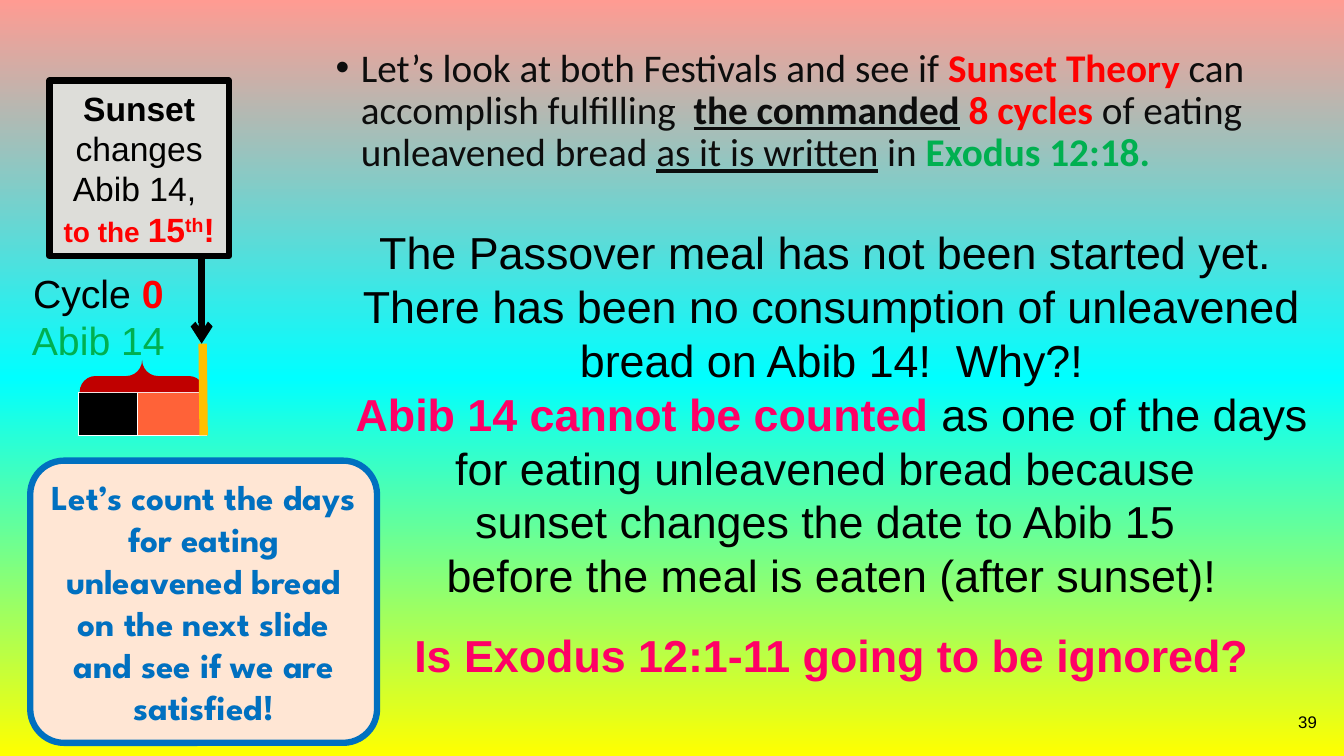
"""Build the slide on Abib 14 and the Sunset Theory."""
from copy import deepcopy

from lxml import etree
from pptx import Presentation
from pptx.dml.color import RGBColor
from pptx.enum.shapes import MSO_CONNECTOR, MSO_SHAPE
from pptx.enum.text import MSO_ANCHOR, MSO_AUTO_SIZE, PP_ALIGN
from pptx.oxml.ns import qn
from pptx.util import Inches, Pt

CENTER, RIGHT, LEFT = PP_ALIGN.CENTER, PP_ALIGN.RIGHT, PP_ALIGN.LEFT
TOP, MIDDLE = MSO_ANCHOR.TOP, MSO_ANCHOR.MIDDLE
RECTANGLE, ROUNDED, BRACE = MSO_SHAPE.RECTANGLE, MSO_SHAPE.ROUNDED_RECTANGLE, MSO_SHAPE.RIGHT_BRACE
STRAIGHT = MSO_CONNECTOR.STRAIGHT
NO_FIT = MSO_AUTO_SIZE.NONE

BLACK, INK, RED, GREEN, PINK, BLUE = "000000", "0D0D0D", "FF0000", "00B050", "FF0066", "0070C0"
SKY = [(0, "FF9B92"), (0.5, "00FFFF"), (1, "FFFF00")]
DAY_PARTS = [(0.58, "000000"), (0.69, "FF6238")]

STRONG_RED = {"color": RED, "bold": True}
STRONG_PINK = {"color": PINK, "bold": True}
INTRO = [[
    ("Let’s look at both Festivals and see if ", {}),
    ("Sunset Theory ", STRONG_RED),
    ("can accomplish fulfilling  ", {}),
    ("the commanded", {"bold": True, "underline": True}),
    (" ", {"bold": True}),
    ("8 cycles ", STRONG_RED),
    ("of eating unleavened bread ", {}),
    ("as it is written", {"underline": True}),
    (" in ", {}),
    ("Exodus 12:18.", {"color": GREEN, "bold": True}),
]]
CYCLE = [[("Cycle ", {}), ("0 ", STRONG_RED), ("Abib 14", {"color": GREEN})]]
SUNSET = [[
    ("Sunset", {"bold": True}),
    (" changes Abib 14, \n", {}),
    ("to the ", {**STRONG_RED, "size": 20}),
    ("15", STRONG_RED),
    ("th", {**STRONG_RED, "raised": True}),
    ("! ", STRONG_RED),
]]
ARGUMENT = [
    [("The Passover meal has not been started yet.  There has been no consumption "
      "of unleavened bread on Abib 14!  Why?!", {})],
    [("Abib 14 cannot be counted ", STRONG_PINK),
     ("as one of the days for eating unleavened bread because \n"
      "sunset changes the date to Abib 15 \n"
      "before the meal is eaten (after sunset)!", {})],
    [("Is Exodus 12:1-11 going to be ignored?", STRONG_PINK)],
]
NEXT_STEP = [[("Let’s count the days for eating unleavened bread on the next slide "
               "and see if we are satisfied!", {"bold": True})]]
PAGE = [[("39", {})]]


def rgb(value):
    return RGBColor.from_string(value)


def inches(*lengths):
    return [Inches(length) for length in lengths]


def write(shape, paragraphs, size, font="Arial", color=BLACK, align=CENTER, anchor=MIDDLE):
    """Fill a shape with paragraphs of (text, format) runs and return its text frame."""
    frame = shape.text_frame
    frame.word_wrap = True
    frame.auto_size = NO_FIT
    frame.vertical_anchor = anchor
    for number, runs in enumerate(paragraphs):
        paragraph = frame.add_paragraph() if number else frame.paragraphs[0]
        paragraph.alignment = align
        for text, style in runs:
            for part, line in enumerate(text.split("\n")):
                if part:
                    paragraph.add_line_break()
                if not line:
                    continue
                run = paragraph.add_run()
                run.text = line
                run.font.name = font
                run.font.size = Pt(style.get("size", size))
                run.font.color.rgb = rgb(style.get("color", color))
                run.font.bold = style.get("bold", False)
                run.font.underline = style.get("underline", False)
                if style.get("raised"):
                    run.font._element.set("baseline", "30000")
    return frame


def add_block(slide, kind, box, fill, line=None):
    block = slide.shapes.add_shape(kind, *inches(*box))
    block.shadow.inherit = False
    block.fill.solid()
    block.fill.fore_color.rgb = rgb(fill)
    if line:
        block.line.color.rgb = rgb(line)
        block.line.width = Pt(4.5)
    else:
        block.line.fill.background()
    return block


def add_line(slide, start, end, color, width, arrow=False):
    line = slide.shapes.add_connector(STRAIGHT, *inches(*start, *end))
    line.line.color.rgb = rgb(color)
    line.line.width = Pt(width)
    if arrow:
        etree.SubElement(line.line._get_or_add_ln(), qn("a:tailEnd"), type="arrow")
    etree.SubElement(line._element.spPr, qn("a:effectLst"))


def paint_sky(slide):
    fill = slide.background.fill
    fill.gradient()
    fill.gradient_angle = 270
    stop_list = slide._element.find(".//" + qn("a:gsLst"))
    stop_list.append(deepcopy(stop_list[-1]))
    for stop, (position, color) in zip(fill.gradient_stops, SKY):
        stop.position = position
        stop.color.rgb = rgb(color)


def add_day(slide):
    box = inches(0.78, 3.89, 1.27, 0.43)
    day = slide.shapes.add_table(1, len(DAY_PARTS), *box).table
    day.first_row = day.horz_banding = False
    for column, (width, color) in enumerate(DAY_PARTS):
        day.columns[column].width = Inches(width)
        cell = day.cell(0, column)
        properties = cell._tc.get_or_add_tcPr()
        for side in ("lnL", "lnR", "lnT", "lnB"):
            border = etree.SubElement(properties, qn("a:" + side), w=str(Pt(1)))
            solid = etree.SubElement(border, qn("a:solidFill"))
            etree.SubElement(solid, qn("a:srgbClr"), val="FFFFFF")
        cell.fill.solid()
        cell.fill.fore_color.rgb = rgb(color)


def main():
    deck = Presentation()
    deck.slide_width, deck.slide_height = inches(13.33, 7.5)
    slide = deck.slides.add_slide(deck.slide_layouts[1])
    paint_sky(slide)
    title = slide.shapes.title._element
    title.getparent().remove(title)

    add_day(slide)
    brace = add_block(slide, BRACE, (1.25, 3.11, 0.32, 1.24), "C00000")
    brace.rotation = 270
    brace.adjustments[0] = 0.49
    write(slide.shapes.add_textbox(*inches(0.12, 2.7, 1.71, 0.87)), CYCLE, 28)
    add_line(slide, (2.02, 4.32), (2.01, 3.41), "FFC000", 6)

    sunset = add_block(slide, RECTANGLE, (0.49, 0.8, 1.78, 1.74), "DDDDD9", BLACK)
    write(sunset, SUNSET, 24)
    add_line(slide, (2, 2.54), (2, 3.41), BLACK, 4.5, arrow=True)
    write(slide.shapes.add_textbox(*inches(9.58, 6.96, 3.58, 0.4)), PAGE, 12, align=RIGHT)

    intro = slide.placeholders[1]
    intro.left, intro.top, intro.width, intro.height = inches(3.23, 0.43, 10.17, 1.48)
    bullet = write(intro, INTRO, 28, "Calibri", INK, LEFT, TOP).paragraphs[0]
    bullet.line_spacing = 0.9
    bullet.space_before = Pt(0)
    indents = bullet._p.get_or_add_pPr()
    indents.set("marL", str(Inches(0.25)))
    indents.set("indent", str(Inches(-0.25)))

    argument = slide.shapes.add_textbox(*inches(3.29, 2.17, 9.92, 4.66))
    write(argument, ARGUMENT, 32).paragraphs[-1].space_before = Pt(19)

    next_step = add_block(slide, ROUNDED, (0.3, 4.57, 3.44, 2.8), "FFE6D4", BLUE)
    next_step.adjustments[0] = 0.12
    write(next_step, NEXT_STEP, 25, "League Spartan", BLUE)
    deck.save("out.pptx")


if __name__ == "__main__":
    main()
